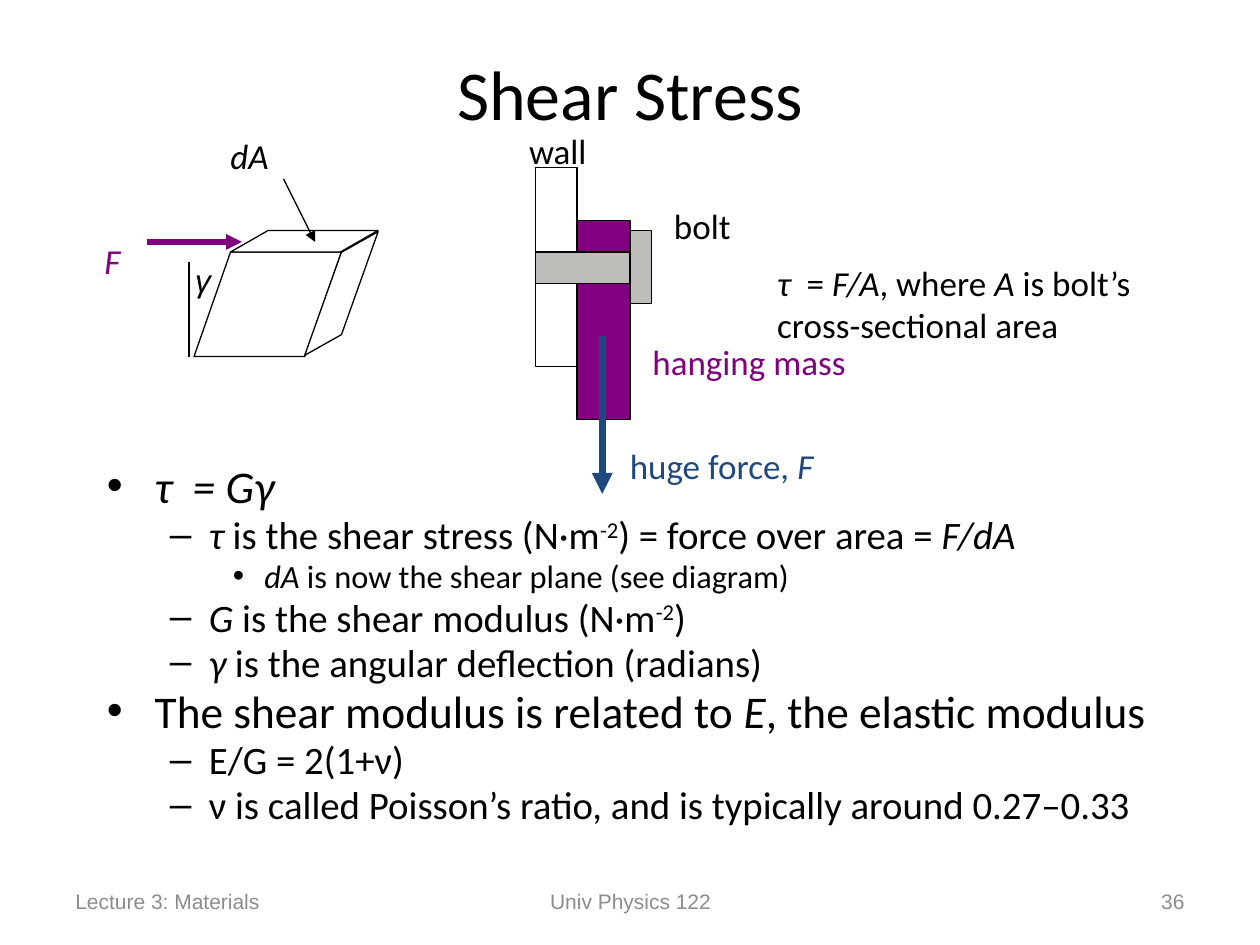
from lxml import etree
from pptx import Presentation
from pptx.dml.color import RGBColor
from pptx.enum.shapes import MSO_CONNECTOR, MSO_SHAPE
from pptx.enum.text import MSO_ANCHOR, MSO_AUTO_SIZE, PP_ALIGN
from pptx.oxml.ns import qn
from pptx.util import Inches, Pt

BLACK, WHITE, GRAY = "000000", "FFFFFF", "BDBDB9"
PURPLE, BLUE, FOOTER_GRAY = "800080", "1F497D", "8C8C8C"
color = RGBColor.from_string


def write(paragraph, text, size, hex_color=BLACK, font_name="Calibri"):
    """Fill a paragraph; * switches italic and ^ switches superscript."""
    paragraph.font.size = Pt(size)
    paragraph.font.name = font_name
    paragraph.font.color.rgb = color(hex_color)
    for i, italic_part in enumerate(text.split("*")):
        for j, part in enumerate(italic_part.split("^")):
            if part:
                run = paragraph.add_run()
                run.text = part
                if i % 2:
                    run.font.italic = True
                if j % 2:
                    run._r.get_or_add_rPr().set("baseline", "30000")


def add_text_box(left, top, width, height, wrap):
    box = slide.shapes.add_textbox(Inches(left), Inches(top), Inches(width), Inches(height))
    box.text_frame.word_wrap = wrap
    return box.text_frame


presentation = Presentation()
presentation.slide_width = Inches(10)
presentation.slide_height = Inches(7.5)
slide = presentation.slides.add_slide(presentation.slide_layouts[5])

# Title
title = slide.shapes.title
title.left, title.top = Inches(0.5), Inches(0.11)
title.width, title.height = Inches(9), Inches(1.25)
title.text_frame.vertical_anchor = MSO_ANCHOR.MIDDLE
title.text_frame.paragraphs[0].alignment = PP_ALIGN.CENTER
write(title.text_frame.paragraphs[0], "Shear Stress", 40)

# Footer
footers = [
    (0.5, 2.33, PP_ALIGN.LEFT, "Lecture 3: Materials"),
    (3.42, 3.17, PP_ALIGN.CENTER, "Univ Physics 122"),
    (7.17, 2.33, PP_ALIGN.RIGHT, "36"),
]
for left, width, alignment, text in footers:
    frame = add_text_box(left, 6.95, width, 0.4, True)
    frame.vertical_anchor = MSO_ANCHOR.MIDDLE
    frame.paragraphs[0].alignment = alignment
    write(frame.paragraphs[0], text, 12, FOOTER_GRAY, "Arial")

# Bulleted explanation: (level, text)
points = [
    (0, "*τ  = Gγ*"),
    (1, "*τ* is the shear stress (N·m^-2^) = force over area = *F/dA*"),
    (2, "*dA* is now the shear plane (see diagram)"),
    (1, "*G* is the shear modulus (N·m^-2^)"),
    (1, "*γ* is the angular deflection (radians)"),
    (0, "The shear modulus is related to *E*, the elastic modulus"),
    (1, "E/G = 2(1+ν)"),
    (1, "ν is called Poisson’s ratio, and is typically around 0.27–0.33"),
]
# Per level: size, indent, hanging, bullet
levels = [(25.9, 0.38, 0.38, "•"), (22.2, 0.81, 0.31, "–"), (18.5, 1.25, 0.25, "•")]
frame = add_text_box(0.75, 3.67, 8.67, 3.17, True)
for index, (level, text) in enumerate(points):
    size, indent, hanging, bullet = levels[level]
    paragraph = frame.add_paragraph() if index else frame.paragraphs[0]
    paragraph.level = level
    properties = paragraph._p.get_or_add_pPr()
    properties.set("marL", str(Inches(indent)))
    properties.set("indent", str(-Inches(hanging)))
    etree.SubElement(properties, qn("a:buFont")).set("typeface", "Arial")
    etree.SubElement(properties, qn("a:buChar")).set("char", bullet)
    paragraph.line_spacing = 0.8
    paragraph.space_before = Pt(round(size * 0.2, 1))
    write(paragraph, text, size)

# Hanging mass, wall, bolt shaft and bolt head, then the front, top and side of the block
RECTANGLE, PARALLELOGRAM = MSO_SHAPE.RECTANGLE, MSO_SHAPE.PARALLELOGRAM
parts = [
    (RECTANGLE, 4.58, 1.75, 0.42, 1.58, PURPLE, None, 0),
    (RECTANGLE, 4.25, 1.33, 0.33, 1.58, WHITE, None, 0),
    (RECTANGLE, 4.25, 2, 0.75, 0.25, GRAY, None, 0),
    (RECTANGLE, 5, 1.83, 0.17, 0.58, GRAY, None, 0),
    (PARALLELOGRAM, 1.54, 2, 1.17, 0.83, WHITE, 0.35, 0),
    (PARALLELOGRAM, 1.83, 1.83, 1.17, 0.17, WHITE, 1.75, 0),
    (PARALLELOGRAM, 2.15, 2.22, 1.12, 0.22, WHITE, 1.15, 289.6),
]
for preset, left, top, width, height, fill, slant, rotation in parts:
    shape = slide.shapes.add_shape(preset, Inches(left), Inches(top), Inches(width), Inches(height))
    shape.shadow.inherit = False
    shape.fill.solid()
    shape.fill.fore_color.rgb = color(fill)
    shape.line.color.rgb = color(BLACK)
    shape.line.width = Pt(0.75)
    if slant:
        shape.adjustments[0] = slant
    if rotation:
        shape.rotation = rotation
        shape._element.spPr.get_or_add_xfrm().set("flipV", "1")

# Shear force, area pointer, vertical reference and huge force
lines = [
    (1.17, 1.92, 1.92, 1.92, PURPLE, 3, True),
    (2.25, 1.42, 2.5, 1.92, BLACK, 0.75, True),
    (1.5, 2.83, 1.5, 2.08, BLACK, 0.75, False),
    (4.78, 2.67, 4.78, 3.92, BLUE, 4, True),
]
for x1, y1, x2, y2, hex_color, width, arrow in lines:
    connector = slide.shapes.add_connector(
        MSO_CONNECTOR.STRAIGHT, Inches(x1), Inches(y1), Inches(x2), Inches(y2))
    connector.line.color.rgb = color(hex_color)
    connector.line.width = Pt(width)
    if arrow:
        etree.SubElement(connector.line._get_or_add_ln(), qn("a:tailEnd")).set("type", "triangle")
    etree.SubElement(connector._element.spPr, qn("a:effectLst"))

# Diagram labels
labels = [
    (1.73, 1.02, 0.54, 0.43, ["*dA*"], 20, BLACK, "Calibri"),
    (0.73, 1.85, 0.37, 0.43, ["*F*"], 20, PURPLE, "Calibri"),
    (1.45, 2.02, 0.3, 0.4, ["*γ*"], 18, BLACK, "Arial"),
    (4.9, 3.48, 1.84, 0.43, ["huge force, *F*"], 20, BLUE, "Calibri"),
    (5.25, 1.57, 0.65, 0.43, ["bolt"], 20, BLACK, "Calibri"),
    (4.1, 0.98, 0.68, 0.43, ["wall"], 20, BLACK, "Calibri"),
    (5.08, 2.65, 1.93, 0.43, ["hanging mass"], 20, PURPLE, "Calibri"),
    (6.07, 2.03, 3.33, 0.77, ["*τ*  = *F/A*, where *A* is bolt’s", "cross-sectional area"],
     20, BLACK, "Calibri"),
]
for left, top, width, height, texts, size, hex_color, font_name in labels:
    frame = add_text_box(left, top, width, height, False)
    frame.auto_size = MSO_AUTO_SIZE.SHAPE_TO_FIT_TEXT
    for index, text in enumerate(texts):
        paragraph = frame.add_paragraph() if index else frame.paragraphs[0]
        write(paragraph, text, size, hex_color, font_name)

presentation.save("out.pptx")
